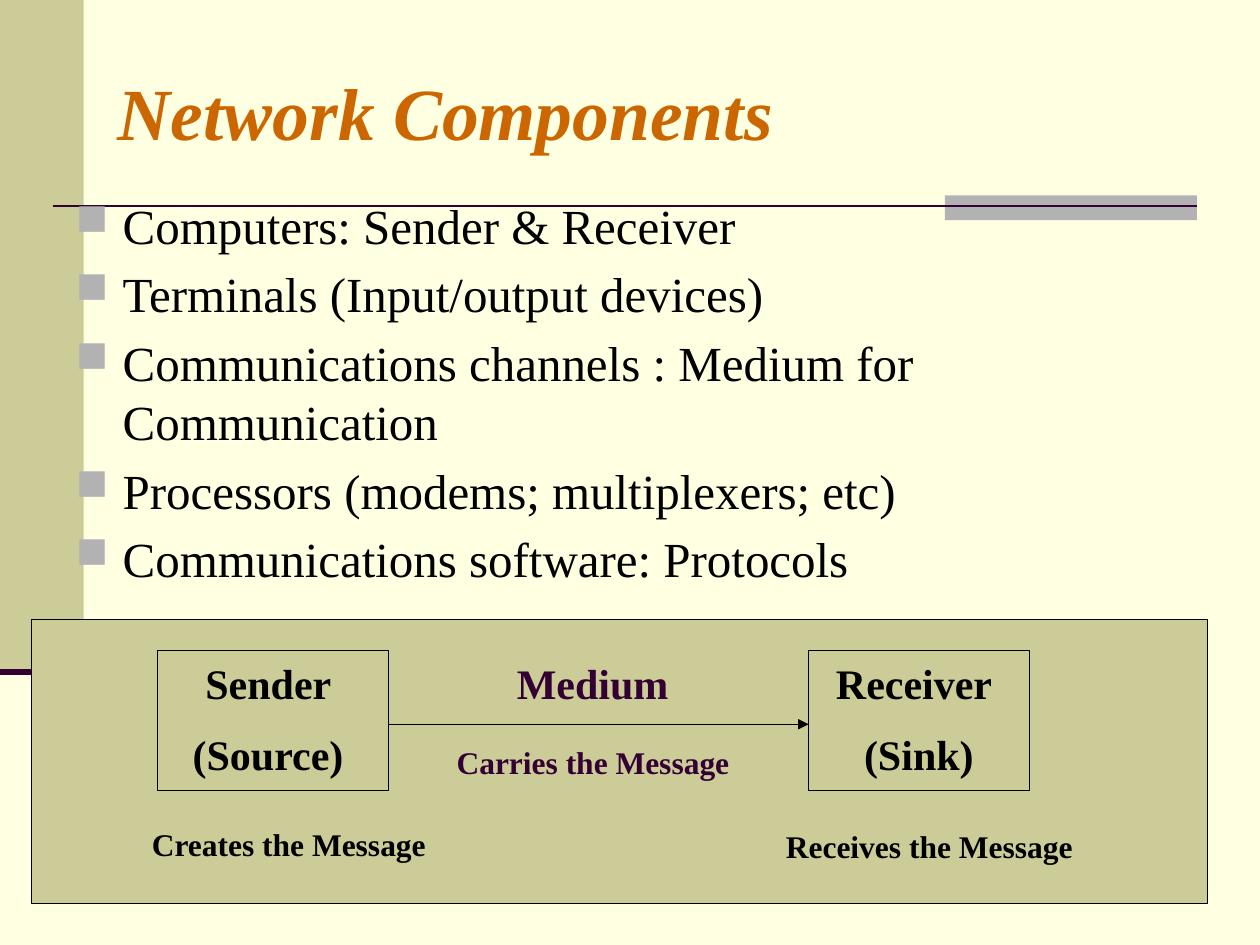
from lxml import etree
from pptx import Presentation
from pptx.dml.color import RGBColor
from pptx.enum.shapes import MSO_CONNECTOR, MSO_SHAPE
from pptx.enum.text import MSO_ANCHOR, MSO_AUTO_SIZE, PP_ALIGN
from pptx.oxml.ns import qn
from pptx.util import Cm, Pt

RECT = MSO_SHAPE.RECTANGLE
LINE = MSO_CONNECTOR.STRAIGHT
LEFT, CENTER = PP_ALIGN.LEFT, PP_ALIGN.CENTER
TOP, MIDDLE = MSO_ANCHOR.TOP, MSO_ANCHOR.MIDDLE
NO_FIT = MSO_AUTO_SIZE.NONE

CREAM, OLIVE, GRAY = "FFFFE1", "CCCC99", "B2B2B2"
PLUM, ORANGE, BLACK = "330033", "CC6600", "000000"


def color(code):
    return RGBColor.from_string(code)


def child(parent, tag, **attrs):
    return etree.SubElement(parent, qn(tag), attrs)


def write(frame, *lines, size=24, ink=BLACK, bold=True, italic=False,
          align=CENTER, anchor=TOP, gap=0.5, indent=0, mark=None):
    """Fill a text frame; gap is the space before, as a share of the size."""
    frame.word_wrap = True
    frame.auto_size = NO_FIT
    frame.vertical_anchor = anchor
    for num, line in enumerate(lines):
        para = frame.paragraphs[0] if num == 0 else frame.add_paragraph()
        para.alignment = align
        para.space_before = Pt(size * gap)
        run = para.add_run()
        run.text = line
        font = run.font
        font.name, font.size = "Times New Roman", Pt(size)
        font.bold, font.italic = bold, italic
        font.color.rgb = color(ink)
        props = para._p.get_or_add_pPr()
        if indent:
            props.set("marL", str(Cm(indent)))
        if mark:
            props.set("indent", str(-Cm(indent)))
            tint = child(props, "a:buClr")
            child(tint, "a:srgbClr", val=mark)
            child(props, "a:buSzPct", val="90000")
            child(props, "a:buFont", typeface="Wingdings")
            child(props, "a:buChar", char="n")


class Deck:
    def __init__(self):
        self.prs = Presentation()
        self.prs.slide_width, self.prs.slide_height = Cm(25.4), Cm(19.05)
        self.slide = self.prs.slides.add_slide(self.prs.slide_layouts[1])
        self.shapes = self.slide.shapes
        fill = self.slide.background.fill
        fill.solid()
        fill.fore_color.rgb = color(CREAM)

    def rect(self, x, y, w, h, fill=None, edge=None):
        box = self.shapes.add_shape(RECT, Cm(x), Cm(y), Cm(w), Cm(h))
        box.shadow.inherit = False
        if fill:
            box.fill.solid()
            box.fill.fore_color.rgb = color(fill)
        else:
            box.fill.background()
        if edge:
            box.line.color.rgb = color(edge)
            box.line.width = Pt(0.75)
        else:
            box.line.fill.background()
        return box

    def rule(self, x, y, end, ink, width, arrow=False):
        line = self.shapes.add_connector(LINE, Cm(x), Cm(y), Cm(end), Cm(y))
        line.line.color.rgb = color(ink)
        line.line.width = Pt(width)
        if arrow:
            child(line.line._get_or_add_ln(), "a:tailEnd", type="triangle")
        child(line.element.spPr, "a:effectLst")

    def text(self, x, y, w, h, *lines, **style):
        box = self.shapes.add_textbox(Cm(x), Cm(y), Cm(w), Cm(h))
        write(box.text_frame, *lines, **style)

    def holder(self, num, x, y, w, h, *lines, **style):
        hold = self.slide.placeholders[num]
        hold.left, hold.top, hold.width, hold.height = Cm(x), Cm(y), Cm(w), Cm(h)
        self.shapes.element.append(hold.element)  # bring to front
        write(hold.text_frame, *lines, **style)


def main():
    deck = Deck()

    # Frame: side band, title rule and accent
    deck.rect(0, 0, 1.69, 13.55, fill=OLIVE)
    deck.rect(19.05, 3.94, 5.08, 0.5, fill=GRAY)
    deck.rule(1.06, 4.15, 24.13, PLUM, 1.5)
    deck.rule(0, 13.55, 1.69, PLUM, 3.5)
    deck.rect(0.64, 12.49, 23.7, 5.72, fill=OLIVE, edge=BLACK)

    # Title and list
    deck.holder(0, 2.12, 0.64, 22.86, 3.18, "Network Components", size=42,
                ink=ORANGE, italic=True, align=LEFT, anchor=MIDDLE, gap=0)
    deck.holder(1, 1.27, 3.81, 22.86, 7.41,
                "Computers: Sender & Receiver",
                "Terminals (Input/output devices)",
                "Communications channels : Medium for Communication",
                "Processors (modems; multiplexers; etc)",
                "Communications software: Protocols",
                size=28, bold=False, align=LEFT, gap=0.2, indent=0.95, mark=GRAY)

    # Sender and receiver, joined by the medium
    for x, w, lines in ((3.18, 4.66, ("Sender ", "(Source) ")),
                        (16.3, 4.45, ("Receiver ", "(Sink)"))):
        box = deck.rect(x, 13.12, w, 2.82, edge=BLACK)
        write(box.text_frame, *lines)
    deck.rule(7.83, 14.6, 16.3, BLACK, 0.75, arrow=True)

    # Captions
    for x, y, line, ink in ((1.91, 16.51, "Creates the Message", BLACK),
                            (14.82, 16.55, "Receives the Message", BLACK),
                            (8.04, 14.86, "Carries the Message", PLUM)):
        deck.text(x, y, 7.83, 1.02, line, size=18, ink=ink)
    deck.text(9.53, 13.12, 5.29, 1.27, "Medium", ink=PLUM, align=LEFT, indent=0.64)

    deck.prs.save("out.pptx")


if __name__ == "__main__":
    main()
